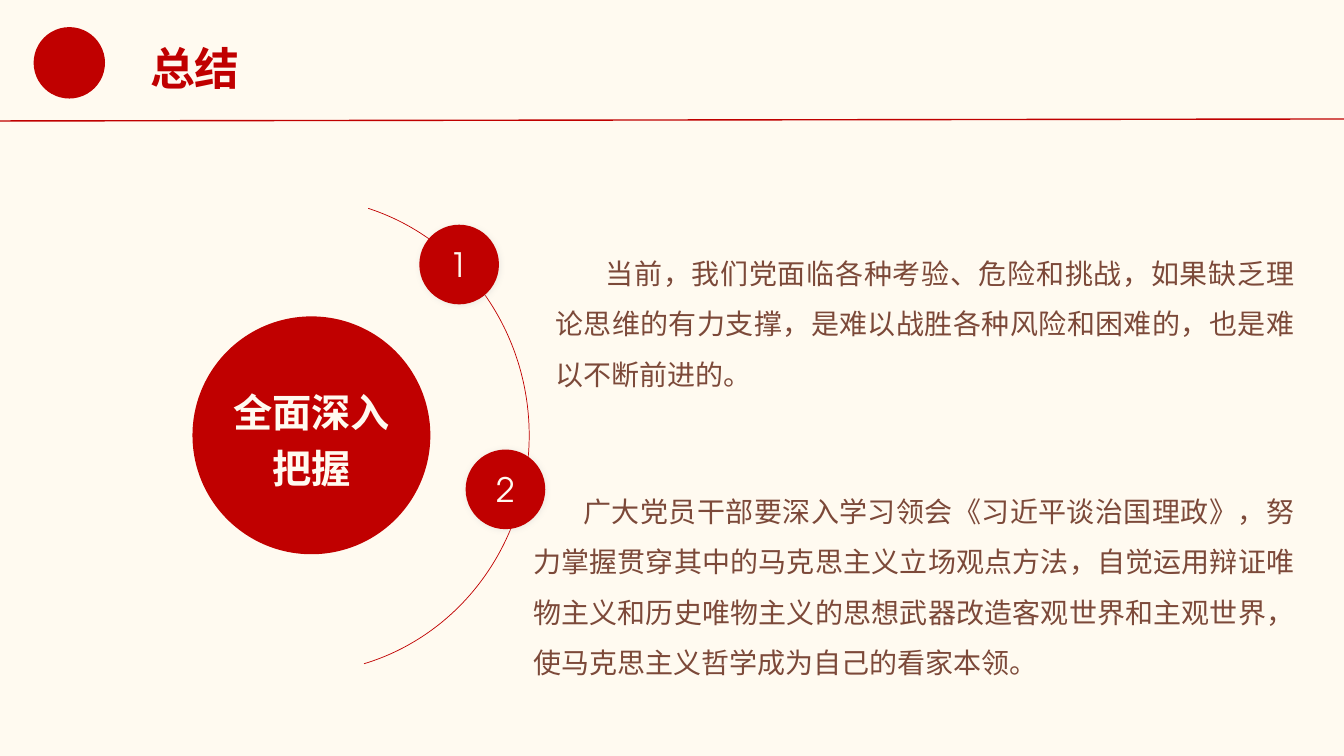
from lxml.etree import SubElement
from pptx import Presentation
from pptx.dml.color import RGBColor
from pptx.enum.shapes import MSO_CONNECTOR, MSO_SHAPE
from pptx.enum.text import MSO_ANCHOR, MSO_AUTO_SIZE, PP_ALIGN
from pptx.oxml import parse_xml
from pptx.oxml.ns import nsdecls, qn
from pptx.util import Pt

RED = RGBColor(0xC0, 0x00, 0x00)
CREAM = RGBColor(0xFF, 0xFA, 0xF0)
BROWN = RGBColor(0x7C, 0x49, 0x39)
CHINESE_FONT = "Noto Sans CJK SC"
NUMBER_FONT = "TeX Gyre Adventor"

SLIDE_WIDTH, SLIDE_HEIGHT = 960, 540
BADGE_SIZE = 56.9

# Each point: badge offset and text offset within the diagram, text size, wording
POINTS = [
    ((249.1, 19.4), (339.1, 26.6), (542.2, 116.6),
     "当前，我们党面临各种考验、危险和挑战，如果缺乏理论思维的有力支撑，"
     "是难以战胜各种风险和困难的，也是难以不断前进的。"),
    ((282.2, 180), (323.3, 196.6), (558, 152.6),
     "广大党员干部要深入学习领会《习近平谈治国理政》，努力掌握贯穿其中的"
     "马克思主义立场观点方法，自觉运用辩证唯物主义和历史唯物主义的思想武器"
     "改造客观世界和主观世界，使马克思主义哲学成为自己的看家本领。"),
]


def write_text(shape, text, size, color, font_name=CHINESE_FONT, bold=False,
               alignment=PP_ALIGN.LEFT, line_spacing=1.0):
    paragraph = shape.text_frame.paragraphs[0]
    paragraph.text = text
    paragraph.alignment = alignment
    paragraph.line_spacing = line_spacing
    font = paragraph.font
    font.size, font.bold, font.name = Pt(size), bold, font_name
    font.color.rgb = color
    # East Asian characters take their own typeface entry
    SubElement(font._rPr, qn("a:ea"), typeface=font_name)
    return paragraph


def add_text_box(slide, left, top, width, height, wrap):
    box = slide.shapes.add_textbox(Pt(left), Pt(top), Pt(width), Pt(height))
    box.text_frame.word_wrap = wrap
    box.text_frame.auto_size = MSO_AUTO_SIZE.SHAPE_TO_FIT_TEXT
    return box


def add_circle(slide, left, top, size):
    circle = slide.shapes.add_shape(
        MSO_SHAPE.OVAL, Pt(left), Pt(top), Pt(size), Pt(size))
    circle.shadow.inherit = False
    circle.fill.solid()
    circle.fill.fore_color.rgb = RED
    circle.line.fill.background()
    frame = circle.text_frame
    frame.word_wrap = True
    frame.vertical_anchor = MSO_ANCHOR.MIDDLE
    frame.margin_left = frame.margin_right = 0
    frame.margin_top = frame.margin_bottom = 0
    return circle


def add_soft_shadow(shape):
    effects = shape._element.spPr.find(qn("a:effectLst"))
    effects.append(parse_xml(
        f'<a:outerShdw {nsdecls("a")} blurRad="{Pt(4)}" dist="{Pt(1)}" '
        'dir="2700000" algn="tl" rotWithShape="0"><a:srgbClr val="CCCCCC">'
        '<a:alpha val="36000"/></a:srgbClr></a:outerShdw>'))


def add_header(slide, left, top, width, height):
    # Plain disc in the emblem's place
    add_circle(slide, left + 24, top + 19.4, 51)

    # Rule along the lower edge, rising slightly to the right
    rule = slide.shapes.add_connector(
        MSO_CONNECTOR.STRAIGHT, Pt(left), Pt(top + height),
        Pt(left + width), Pt(top + height - 1.4))
    rule.line.color.rgb = RED
    rule.line.width = Pt(1)
    SubElement(rule._element.spPr, qn("a:effectLst"))

    # Title
    title = add_text_box(slide, left + 100.1, top + 25.9, 79.2, 46.1, False)
    write_text(title, "总结", 32, RED, bold=True)


def add_point(slide, left, top, number, point):
    badge_offset, text_offset, text_size, wording = point

    # Numbered badge
    badge = add_circle(slide, left + badge_offset[0], top + badge_offset[1],
                       BADGE_SIZE)
    add_soft_shadow(badge)
    write_text(badge, str(number), 24, CREAM, NUMBER_FONT,
               alignment=PP_ALIGN.CENTER)

    # Explanation with an indented first line
    box = add_text_box(slide, left + text_offset[0], top + text_offset[1],
                       *text_size, True)
    paragraph = write_text(box, wording, 20, BROWN,
                           alignment=PP_ALIGN.JUSTIFY, line_spacing=1.5)
    paragraph._p.get_or_add_pPr().set("indent", str(Pt(36)))


def add_diagram(slide, left, top, width, height):
    # Central topic
    topic = add_circle(slide, left + 87.1, top + 84.9, 169.9)
    write_text(topic, "全面深入把握", 28, CREAM, bold=True,
               alignment=PP_ALIGN.CENTER, line_spacing=1.2)

    # Arc behind the badges
    arc = slide.shapes.add_shape(
        MSO_SHAPE.ARC, Pt(left), Pt(top), Pt(width), Pt(height))
    arc.shadow.inherit = False
    arc.adjustments[0], arc.adjustments[1] = 172.05, 44.58
    arc.fill.background()
    arc.line.color.rgb = RED
    arc.line.width = Pt(0.5)

    for number, point in enumerate(POINTS, start=1):
        add_point(slide, left, top, number, point)


def main():
    presentation = Presentation()
    presentation.slide_width = Pt(SLIDE_WIDTH)
    presentation.slide_height = Pt(SLIDE_HEIGHT)
    slide = presentation.slides.add_slide(presentation.slide_layouts[6])
    slide.background.fill.solid()
    slide.background.fill.fore_color.rgb = CREAM

    add_header(slide, 0, 0, SLIDE_WIDTH, 86.4)
    add_diagram(slide, 50.4, 141.1, 327.6, 339.8)
    presentation.save("out.pptx")


if __name__ == "__main__":
    main()
